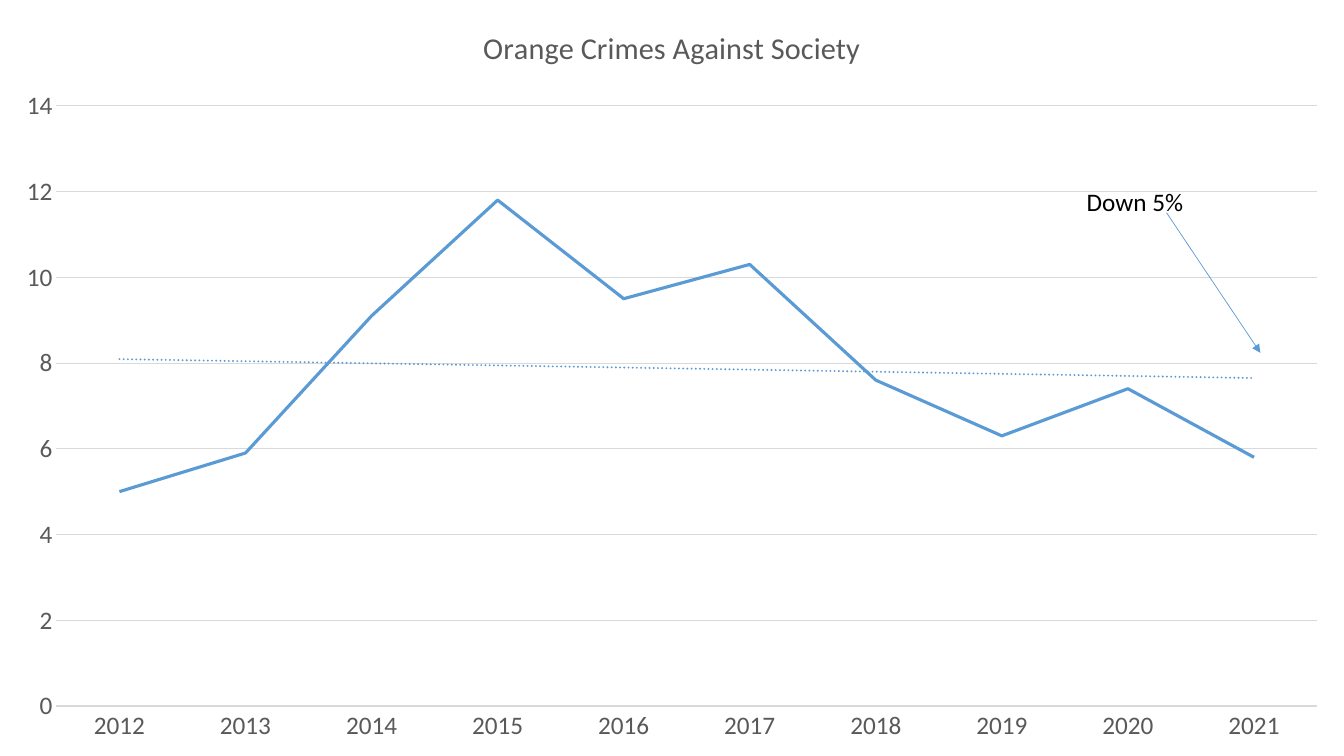
import pptx
import pptx.chart.data
import pptx.dml.color
import pptx.enum.chart
import pptx.enum.shapes
import pptx.enum.text
import pptx.oxml
import pptx.oxml.ns
import pptx.util

Inches = pptx.util.Inches
Pt = pptx.util.Pt
COLORS = {"blue": "5B9BD5", "grid": "D9D9D9", "label": "595959", "text": "000000"}
TITLE = "Orange Crimes Against Society"
CRIMES = {2012: 5, 2013: 5.9, 2014: 9.1, 2015: 11.8, 2016: 9.5,
          2017: 10.3, 2018: 7.6, 2019: 6.3, 2020: 7.4, 2021: 5.8}
PLOT = {"x": 0.042, "y": 0.14, "w": 0.938, "h": 0.794}
NS = pptx.oxml.ns.nsdecls("a", "c")


def style_font(font, size, color):
    for name, value in {"name": "Calibri", "size": Pt(size), "bold": False}.items():
        setattr(font, name, value)
    font.color.rgb = pptx.dml.color.RGBColor.from_string(COLORS[color])


def style_line(line, width, color):
    line.width = Pt(width)
    line.color.rgb = pptx.dml.color.RGBColor.from_string(COLORS[color])


prs = pptx.Presentation()
prs.slide_width = Inches(13.33)
prs.slide_height = Inches(7.5)
slide = prs.slides.add_slide(prs.slide_layouts[6])

data = pptx.chart.data.CategoryChartData(number_format="#,##0")
data.categories = [str(year) for year in CRIMES]
data.add_series(TITLE, list(CRIMES.values()))
chart = slide.shapes.add_chart(
    pptx.enum.chart.XL_CHART_TYPE.LINE, 0, 0, prs.slide_width, prs.slide_height, data).chart
style_font(chart.font, 18, "text")
chart.has_legend = False
chart.has_title = True
p = chart.chart_title.text_frame.paragraphs[0]
r = p.add_run()
r.text = TITLE
style_font(r.font, 21.6, "label")
chart.chart_title.include_in_layout = False

for axis in (chart.category_axis, chart.value_axis):
    axis.major_tick_mark = pptx.enum.chart.XL_TICK_MARK.NONE
    axis.minor_tick_mark = pptx.enum.chart.XL_TICK_MARK.NONE
    style_font(axis.tick_labels.font, 18, "label")
style_line(chart.category_axis.format.line, 0.75, "grid")
axis = chart.value_axis
for name, value in {"minimum_scale": 0, "maximum_scale": 14, "major_unit": 2}.items():
    setattr(axis, name, value)
axis.format.line.fill.background()
style_line(axis.major_gridlines.format.line, 0.75, "grid")
axis.tick_labels.number_format = "#,##0"
axis.tick_labels.number_format_is_linked = False

plot = chart.plots[0]
plot.vary_by_categories = False
series = plot.series[0]
series.smooth = False
series.marker.style = pptx.enum.chart.XL_MARKER_STYLE.NONE
style_line(series.format.line, 2.25, "blue")
trend = pptx.oxml.parse_xml(
    f'<c:trendline {NS}><c:spPr><a:ln w="{Pt(1.5)}" cap="rnd"><a:solidFill>'
    f'<a:srgbClr val="{COLORS["blue"]}"/></a:solidFill><a:prstDash val="sysDot"/></a:ln></c:spPr>'
    '<c:trendlineType val="linear"/><c:dispRSqr val="0"/><c:dispEq val="0"/></c:trendline>')
series._element.find(pptx.oxml.ns.qn("c:cat")).addprevious(trend)

plot_area = chart._chartSpace.chart.plotArea
for layout in plot_area.findall(pptx.oxml.ns.qn("c:layout")):
    plot_area.remove(layout)
modes = "".join(f'<c:{k}Mode val="edge"/>' for k in "xy")
sizes = "".join(f'<c:{k} val="{v}"/>' for k, v in PLOT.items())
plot_area.insert(0, pptx.oxml.parse_xml(
    f'<c:layout {NS}><c:manualLayout><c:layoutTarget val="inner"/>{modes}{sizes}'
    '</c:manualLayout></c:layout>'))

sp = slide.shapes.add_textbox(Inches(10.68), Inches(1.8), Inches(1.17), Inches(0.4))
tf = sp.text_frame
tf.word_wrap = False
tf.auto_size = pptx.enum.text.MSO_AUTO_SIZE.SHAPE_TO_FIT_TEXT
r = tf.paragraphs[0].add_run()
r.text = "Down 5%"
style_font(r.font, 18, "text")

arrow = slide.shapes.add_connector(
    pptx.enum.shapes.MSO_CONNECTOR.STRAIGHT, Inches(11.57), Inches(2.11), Inches(12.5), Inches(3.5))
style_line(arrow.line, 0.5, "blue")
arrow.line._get_or_add_ln().append(pptx.oxml.parse_xml(f'<a:tailEnd {NS} type="triangle"/>'))
arrow._element.spPr.append(pptx.oxml.parse_xml(f'<a:effectLst {NS}/>'))

prs.save("out.pptx")
